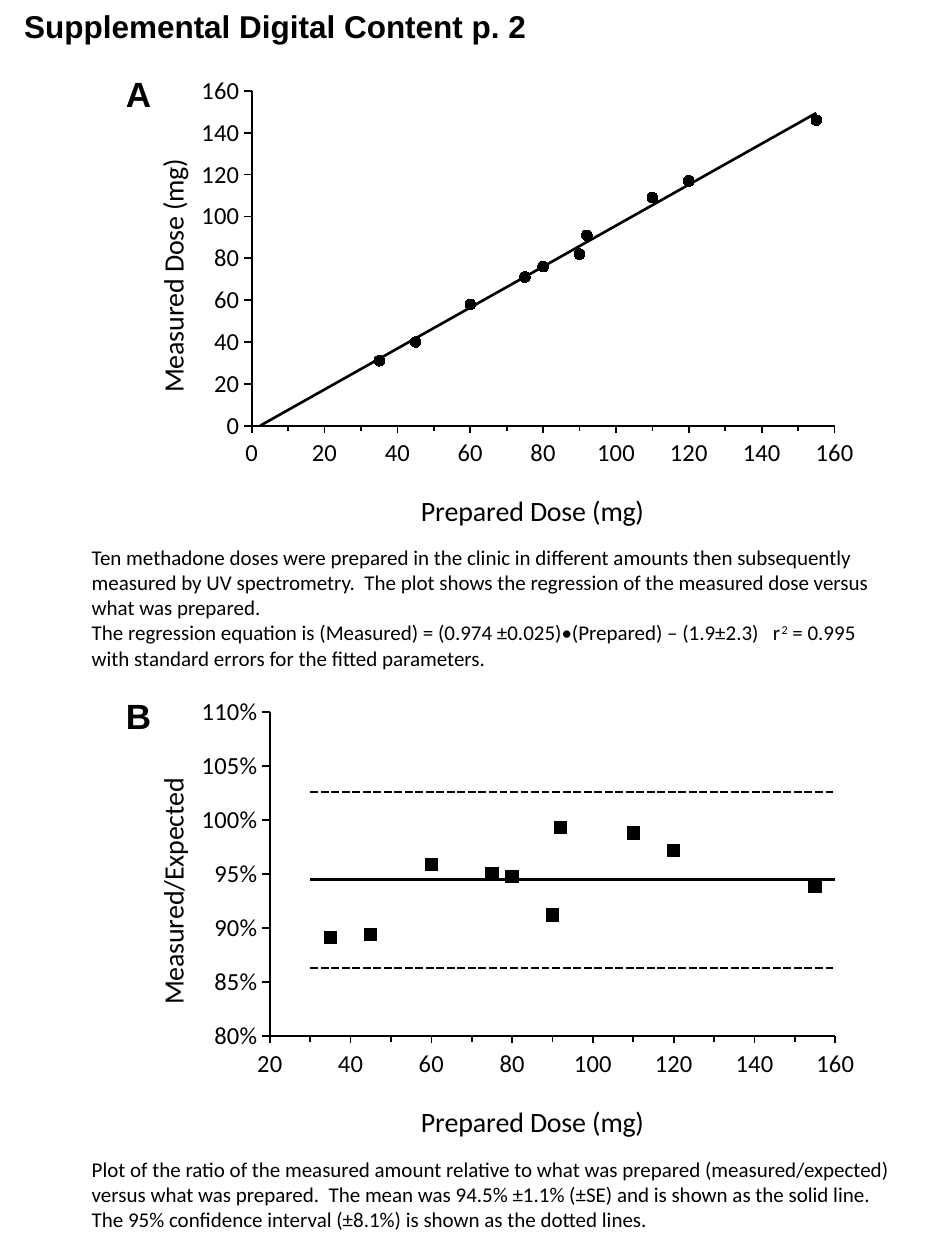
from lxml import etree
from pptx import Presentation
from pptx.chart.data import XyChartData
from pptx.dml.color import RGBColor
from pptx.enum.chart import XL_AXIS_CROSSES, XL_CHART_TYPE, XL_MARKER_STYLE, XL_TICK_LABEL_POSITION, XL_TICK_MARK
from pptx.enum.dml import MSO_LINE
from pptx.enum.text import MSO_AUTO_SIZE, PP_ALIGN
from pptx.oxml import parse_xml
from pptx.oxml.ns import nsdecls, qn
from pptx.util import Inches, Pt

SCATTER = XL_CHART_TYPE.XY_SCATTER
CIRCLE, SQUARE, NO_MARKER = XL_MARKER_STYLE.CIRCLE, XL_MARKER_STYLE.SQUARE, XL_MARKER_STYLE.NONE
OUTSIDE, NO_TICK = XL_TICK_MARK.OUTSIDE, XL_TICK_MARK.NONE
LOW = XL_TICK_LABEL_POSITION.LOW
MINIMUM = XL_AXIS_CROSSES.MINIMUM
DASH, SOLID = MSO_LINE.SQUARE_DOT, MSO_LINE.SOLID
LEFT, CENTER = PP_ALIGN.LEFT, PP_ALIGN.CENTER
FIT_SHAPE = MSO_AUTO_SIZE.SHAPE_TO_FIT_TEXT

COLORS = {"ink": "000000"}
BODY_FONT, HEADING_FONT = "Calibri", "Arial"

HEADING = "Supplemental Digital Content p. 2"
REGRESSION_CAPTION = [
    ["Ten methadone doses were prepared in the clinic in different amounts then subsequently "
     "measured by UV spectrometry.  The plot shows the regression of the measured dose versus "
     "what was prepared."],
    ["The regression equation is (Measured) = (0.974 ±0.025)•(Prepared) – (1.9±2.3)   r",
     ("2", 30), " = 0.995"],
    ["with standard errors for the fitted parameters."],
]
RATIO_CAPTION = [[
    "Plot of the ratio of the measured amount relative to what was prepared (measured/expected) "
    "versus what was prepared.  The mean was 94.5% ±1.1% (±SE) and is shown as the solid line.  "
    "The 95% confidence interval (±8.1%) is shown as the dotted lines."
]]

PREPARED = [35, 45, 60, 75, 80, 90, 92, 110, 120, 155]
MEASURED = [31, 40, 58, 71, 76, 82, 91, 109, 117, 146]
RATIO = [0.891, 0.894, 0.959, 0.95, 0.948, 0.912, 0.993, 0.988, 0.972, 0.939]
REFERENCE_X = [30, 160]
REFERENCE_LINES = [(0.945, SOLID), (1.026, DASH), (0.863, DASH)]

PANELS = [
    {"letter": "A", "top": 0.53, "height": 3.84, "values": MEASURED, "references": [],
     "title": "Measured Dose (mg)", "x": (0, 160, 20), "y": (0, 160, 20), "format": "#,##0",
     "marker": (CIRCLE, 6), "plot": (0.183, 0.05, 0.771, 0.692), "backward": 33},
    {"letter": "B", "top": 5.46, "height": 3.75, "values": RATIO, "references": REFERENCE_LINES,
     "title": "Measured/Expected", "x": (20, 160, 20), "y": (0.8, 1.1, 0.05), "format": "0%",
     "marker": (SQUARE, 7), "plot": (0.207, 0.051, 0.748, 0.686), "backward": None},
]
PANEL_LEFT, PANEL_WIDTH = 0.9, 6
X_TITLE_AT, Y_TITLE_AT = (0.4, 0.868), (0.047, 0.18)


def style_font(font, size, name=BODY_FONT, bold=False):
    font.size, font.name, font.bold = Pt(size), name, bold
    font.color.rgb = RGBColor.from_string(COLORS["ink"])


def style_line(line, width, dash=SOLID):
    line.color.rgb = RGBColor.from_string(COLORS["ink"])
    line.width = Pt(width)
    if dash != SOLID:
        line.dash_style = dash


def add_text(slide, paragraphs, at, size=12, name=BODY_FONT, bold=False, wrap=True, align=LEFT):
    box = slide.shapes.add_textbox(*map(Inches, at))
    frame = box.text_frame
    frame.word_wrap, frame.auto_size = wrap, FIT_SHAPE
    for index, runs in enumerate(paragraphs):
        paragraph = frame.paragraphs[0] if index == 0 else frame.add_paragraph()
        paragraph.alignment = align
        for item in runs:
            text, baseline = item if isinstance(item, tuple) else (item, 0)
            run = paragraph.add_run()
            run.text = text
            style_font(run.font, size, name, bold)
            if baseline:
                run.font._element.set("baseline", str(baseline * 1000))


def place(element, index, values, inner=False):
    for old in element.findall(qn("c:layout")):
        element.remove(old)
    layout = parse_xml(f"<c:layout {nsdecls('c')}><c:manualLayout/></c:layout>")
    entries = [("layoutTarget", "inner")] if inner else []
    entries += [("xMode", "edge"), ("yMode", "edge"), *zip("xywh", values)]
    for tag, value in entries:
        etree.SubElement(layout[0], qn(f"c:{tag}")).set("val", str(value))
    element.insert(index, layout)


def style_axis(axis, scale, title, title_at, minor=False):
    axis.minimum_scale, axis.maximum_scale, axis.major_unit = scale
    axis.has_major_gridlines = axis.has_minor_gridlines = False
    axis.major_tick_mark = OUTSIDE
    axis.minor_tick_mark = OUTSIDE if minor else NO_TICK
    if minor:
        axis.minor_unit = scale[2] / 2
    axis.tick_label_position, axis.crosses = LOW, MINIMUM
    style_line(axis.format.line, 1)
    style_font(axis.tick_labels.font, 14)
    frame = axis.axis_title.text_frame
    frame.text = title
    style_font(frame.paragraphs[0].runs[0].font, 16)
    place(axis.axis_title._element, 1, title_at)


def add_trend(series, backward):
    trend = parse_xml(
        f'<c:trendline {nsdecls("c", "a")}><c:spPr><a:ln w="{Pt(1.5)}"><a:solidFill>'
        f'<a:srgbClr val="{COLORS["ink"]}"/></a:solidFill></a:ln></c:spPr>'
        f'<c:trendlineType val="linear"/><c:backward val="{backward}"/>'
        '<c:dispRSqr val="0"/><c:dispEq val="0"/></c:trendline>')
    series._element.find(qn("c:xVal")).addprevious(trend)


def add_panel(slide, panel):
    data = XyChartData()
    rows = [(PREPARED, panel["values"])]
    rows += [(REFERENCE_X, [level] * 2) for level, _ in panel["references"]]
    for number, (x_values, y_values) in enumerate(rows, 1):
        points = data.add_series(f"Series {number}")
        for x, y in zip(x_values, y_values):
            points.add_data_point(x, y)
    at = (PANEL_LEFT, panel["top"], PANEL_WIDTH, panel["height"])
    chart = slide.shapes.add_chart(SCATTER, *map(Inches, at), data).chart
    chart.has_legend = chart.has_title = False
    style_font(chart.font, 10)
    chart.plots[0].vary_by_categories = False
    place(chart._chartSpace.chart.plotArea, 0, panel["plot"], inner=True)
    style_axis(chart.category_axis, panel["x"], "Prepared Dose (mg)", X_TITLE_AT, minor=True)
    style_axis(chart.value_axis, panel["y"], panel["title"], Y_TITLE_AT)
    labels = chart.value_axis.tick_labels
    labels.number_format, labels.number_format_is_linked = panel["format"], False

    doses, *references = chart.plots[0].series
    doses.smooth = False
    doses.format.line.fill.background()
    doses.marker.style, doses.marker.size = panel["marker"]
    doses.marker.format.fill.solid()
    doses.marker.format.fill.fore_color.rgb = RGBColor.from_string(COLORS["ink"])
    style_line(doses.marker.format.line, 0.75)
    if panel["backward"]:
        add_trend(doses, panel["backward"])
    for series, (_, dash) in zip(references, panel["references"]):
        series.smooth = False
        series.marker.style = NO_MARKER
        style_line(series.format.line, 1.5, dash)
    add_text(slide, [[panel["letter"]]], (PANEL_LEFT, panel["top"], 0.52, 0.44),
             size=20, name=HEADING_FONT, bold=True)


def main():
    presentation = Presentation()
    presentation.slide_width, presentation.slide_height = Inches(7.5), Inches(10)
    slide = presentation.slides.add_slide(presentation.slide_layouts[6])
    add_text(slide, REGRESSION_CAPTION, (0.63, 4.27, 6.54, 1.11))
    add_text(slide, RATIO_CAPTION, (0.63, 9.13, 6.54, 0.71))
    for panel in PANELS:
        add_panel(slide, panel)
    add_text(slide, [[HEADING]], (0.07, 0.01, 4.23, 0.4), size=18, name=HEADING_FONT,
             bold=True, wrap=False, align=CENTER)
    presentation.save("out.pptx")


if __name__ == "__main__":
    main()
